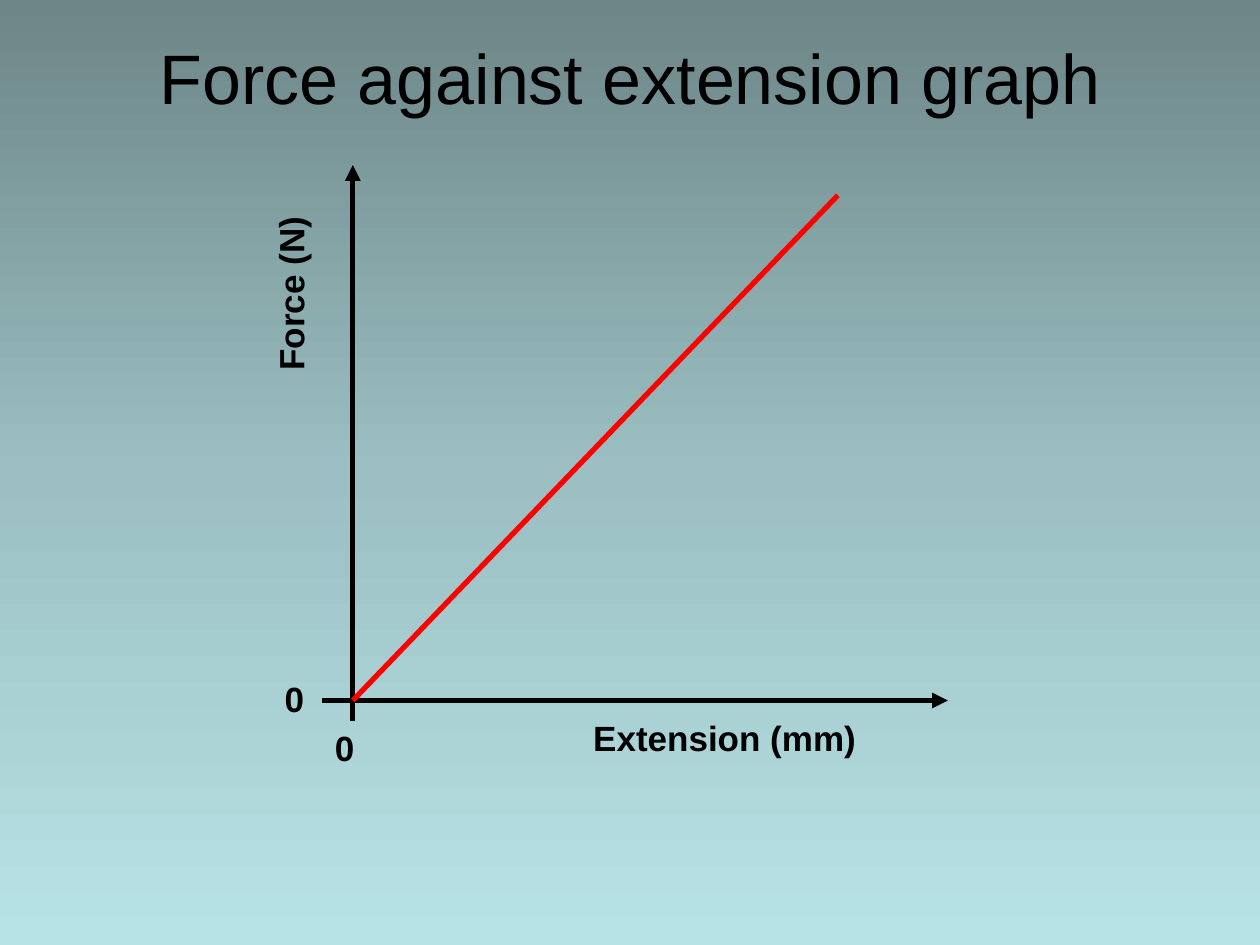
from copy import deepcopy

from lxml import etree
from pptx import Presentation
from pptx.dml.color import RGBColor
from pptx.enum import shapes, text
from pptx.oxml import ns
from pptx.util import Pt

HUES = {"ink": "000000", "curve": "FF0000",
        "top": "6D8688", "mid": "9BBFC2", "base": "B8E3E6"}


def hue(name):
    """Return the named colour."""
    return RGBColor.from_string(HUES[name])


def write(slide, words, box, size=20, bold=True, turn=0, align="LEFT", anchor="TOP"):
    """Add one line of text in a box of left, top, width and height."""
    shape = slide.shapes.add_textbox(*map(Pt, box))
    shape.rotation = turn
    frame = shape.text_frame
    frame.word_wrap = True
    frame.vertical_anchor = getattr(text.MSO_ANCHOR, anchor)
    para = frame.paragraphs[0]
    para.alignment = getattr(text.PP_ALIGN, align)
    run = para.add_run()
    run.text = words
    font = run.font
    font.name, font.size, font.bold = "Arial", Pt(size), bold
    font.color.rgb = hue("ink")


def draw(slide, start, end, tone="ink", arrow=False):
    """Add a straight line, with an arrowhead at its end if asked."""
    line = slide.shapes.add_connector(
        shapes.MSO_CONNECTOR.STRAIGHT, *map(Pt, (*start, *end)))
    line.line.width = Pt(3)
    line.line.color.rgb = hue(tone)
    props = line._element.spPr
    if arrow:
        etree.SubElement(props.find(ns.qn("a:ln")), ns.qn("a:tailEnd"), type="triangle")
    etree.SubElement(props, ns.qn("a:effectLst"))


def shade(slide):
    """Fill the background with a three-stop vertical gradient."""
    fill = slide.background.fill
    fill.gradient()
    fill.gradient_angle = 270
    stops = slide.element.xpath(".//a:gsLst")[0]
    stops.insert(1, deepcopy(stops[0]))
    for stop, name, place in zip(fill.gradient_stops, ("top", "mid", "base"), (0, 0.5, 1)):
        stop.color.rgb = hue(name)
        stop.position = place


def title(slide, box):
    """Place the heading in its box."""
    write(slide, "Force against extension graph", box,
          size=40, bold=False, align="CENTER", anchor="MIDDLE")


def graph(slide, box):
    """Draw the axes, labels and curve within a box."""
    left, top, width, height = box
    x, y = left + 46, top + 306
    draw(slide, (x, top + height), (x, top), arrow=True)
    draw(slide, (x - 17.3, y), (left + width, y), arrow=True)
    labels = (
        ("0", 28.7, 317.5, 39.6, 0),
        ("Force (N)", -46.2, 52.6, 113, 270),
        ("0", 0, 289.5, 39.6, 0),
        ("Extension (mm)", 176.3, 311.8, 175.7, 0),
    )
    for words, across, down, wide, turn in labels:
        write(slide, words, (left + across, top + down, wide, 31), turn=turn)
    draw(slide, (x, y), (left + 323.2, top + 17.3), tone="curve")


def main():
    """Build and save the slide."""
    deck = Presentation()
    deck.slide_width, deck.slide_height = Pt(720), Pt(540)
    slide = deck.slides.add_slide(deck.slide_layouts[6])
    shade(slide)
    title(slide, (36, 21.6, 648, 44))
    graph(slide, (155.6, 94.3, 386, 317.5))
    deck.save("out.pptx")


if __name__ == "__main__":
    main()
